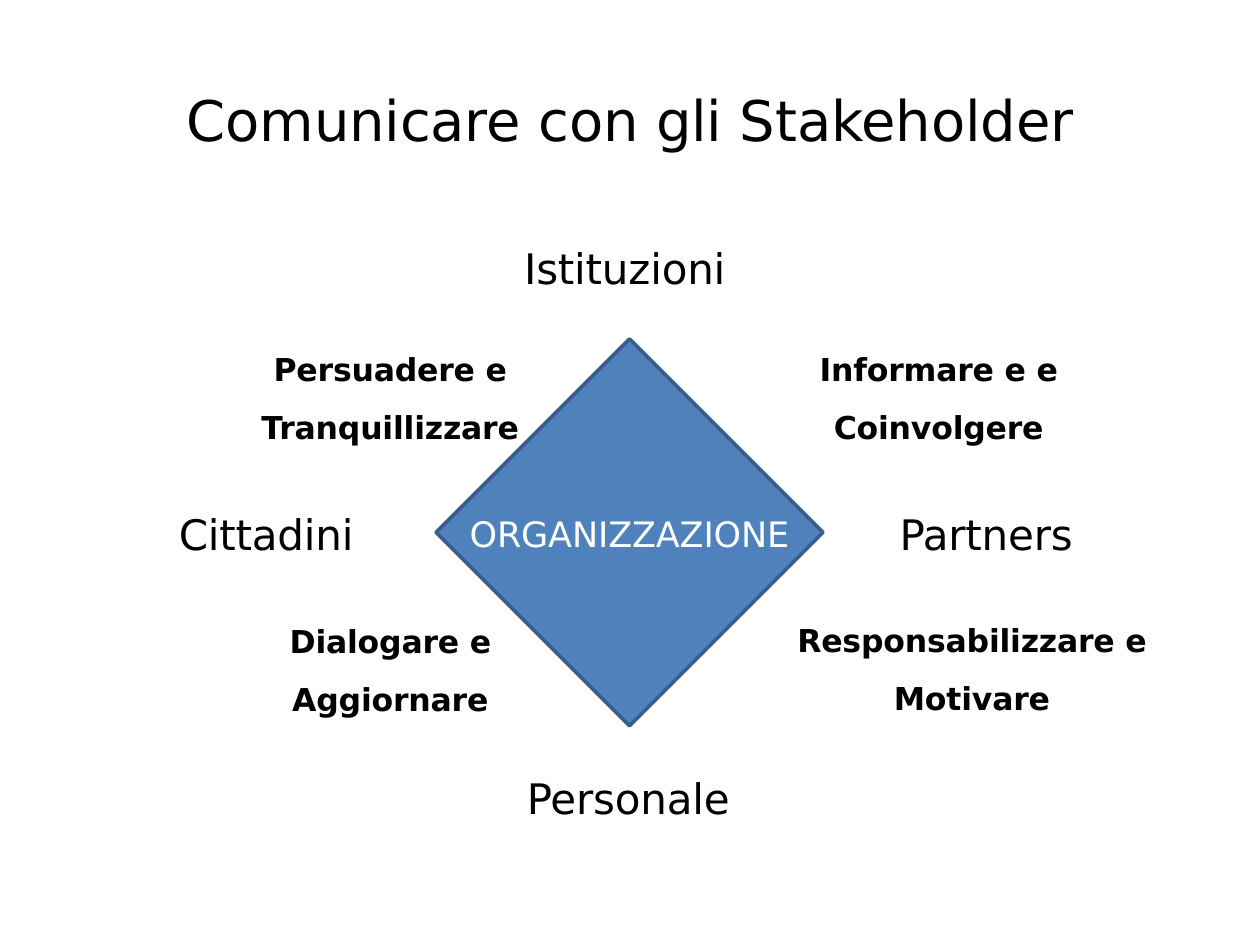
from pptx import Presentation
from pptx.dml.color import RGBColor
from pptx.enum.shapes import MSO_SHAPE
from pptx.enum.text import MSO_ANCHOR, MSO_AUTO_SIZE, PP_ALIGN
from pptx.util import Pt

FONT = "DejaVu Sans"
COLORS = {"text": "000000", "light": "FFFFFF", "diamond": "4F81BD", "outline": "385D8A"}

TITLE = "Comunicare con gli Stakeholder"
CENTER_LABEL = "ORGANIZZAZIONE"
STAKEHOLDERS = [
    ("Istituzioni", 299.5, 136.8, 121),
    ("Cittadini", 102.2, 288.7, 103),
    ("Partners", 514.1, 288.7, 103),
    ("Personale", 301, 439.9, 118),
]
ACTIONS = [
    ("Persuadere e Tranquillizzare", 223, 187.2, 153),
    ("Informare e e Coinvolgere", 536.4, 187.2, 142),
    ("Dialogare e Aggiornare", 223, 342.5, 118),
    ("Responsabilizzare e Motivare", 555.4, 342, 204),
]
DIAMOND_CENTER = (359.7, 304.2)
DIAMOND_SIZE = 221.2


def color(name):
    return RGBColor.from_string(COLORS[name])


def write(shape, text, size, alignment, bold=False, color_name="text",
          anchor=MSO_ANCHOR.TOP, wrap=True, line_spacing=1.0):
    frame = shape.text_frame
    frame.text = text
    frame.word_wrap = wrap
    frame.auto_size = MSO_AUTO_SIZE.NONE
    frame.vertical_anchor = anchor
    frame.margin_left = frame.margin_right = frame.margin_bottom = 0
    frame.margin_top = Pt(1.8)
    paragraph = frame.paragraphs[0]
    paragraph.alignment = alignment
    paragraph.line_spacing = line_spacing
    run = paragraph.runs[0]
    run.font.name = FONT
    run.font.size = Pt(size)
    run.font.bold = bold
    run.font.color.rgb = color(color_name)
    run.font._element.set("spc", "-10")


def add_box(slide, left, top, width, height):
    return slide.shapes.add_textbox(Pt(left), Pt(top), Pt(width), Pt(height))


def add_diamond(slide):
    left, top = (center - DIAMOND_SIZE / 2 for center in DIAMOND_CENTER)
    diamond = slide.shapes.add_shape(
        MSO_SHAPE.DIAMOND, Pt(left), Pt(top), Pt(DIAMOND_SIZE), Pt(DIAMOND_SIZE))
    diamond.shadow.inherit = False
    diamond.fill.solid()
    diamond.fill.fore_color.rgb = color("diamond")
    diamond.line.color.rgb = color("outline")
    diamond.line.width = Pt(2)
    write(diamond, CENTER_LABEL, 20, PP_ALIGN.CENTER, color_name="light",
          anchor=MSO_ANCHOR.MIDDLE, wrap=False)


def main():
    presentation = Presentation()
    presentation.slide_width, presentation.slide_height = Pt(720), Pt(540)
    slide = presentation.slides.add_slide(presentation.slide_layouts[5])
    title = slide.shapes.title
    title.left, title.top, title.width, title.height = Pt(103.7), Pt(46.8), Pt(512.6), Pt(40.3)
    write(title, TITLE, 32, PP_ALIGN.CENTER)
    add_diamond(slide)
    for text, left, top, width in STAKEHOLDERS:
        write(add_box(slide, left, top, width, 31), text, 24, PP_ALIGN.LEFT)
    for text, center, top, width in ACTIONS:
        box = add_box(slide, center - width / 2, top, width, 68)
        write(box, text, 18, PP_ALIGN.CENTER, bold=True, line_spacing=1.52)
    presentation.save("out.pptx")


if __name__ == "__main__":
    main()
